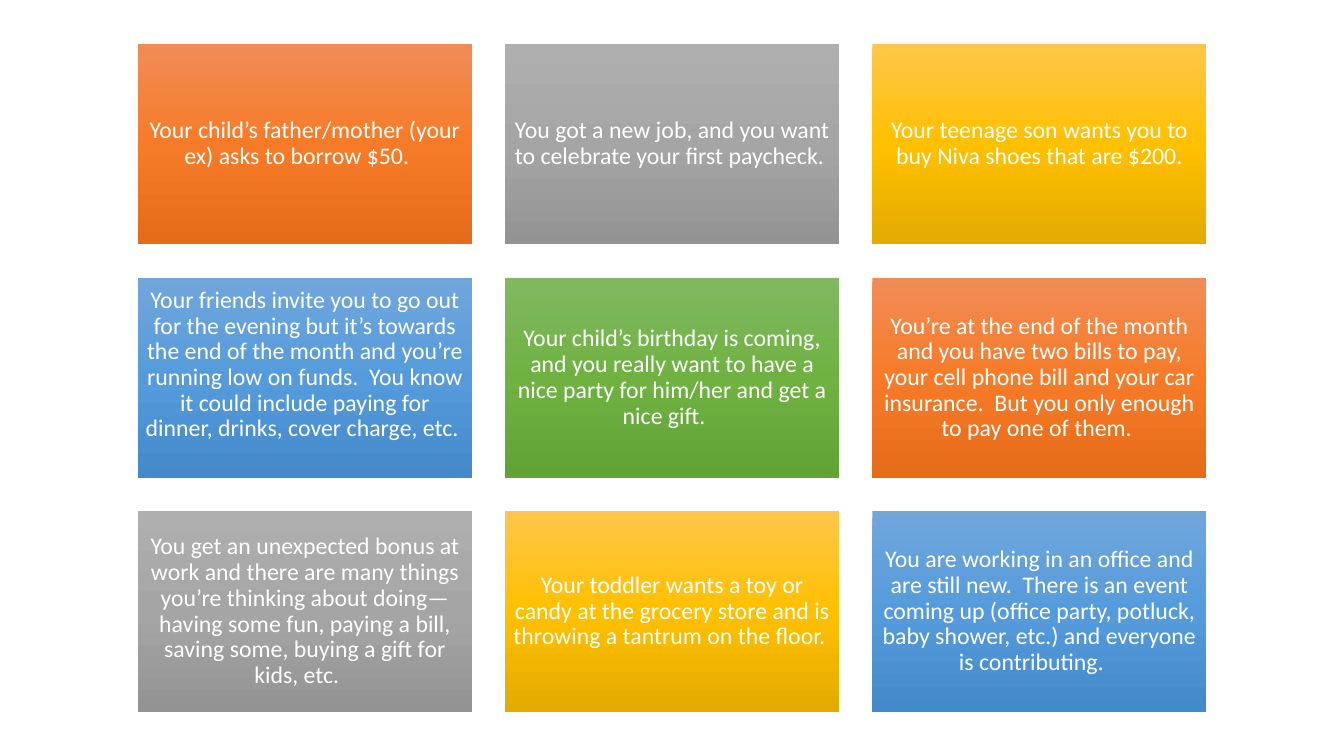
from copy import deepcopy

from pptx import Presentation
from pptx.dml.color import RGBColor
from pptx.enum.shapes import MSO_SHAPE as Shape
from pptx.enum.text import MSO_ANCHOR as Anchor, PP_ALIGN as Align
from pptx.oxml.ns import qn
from pptx.util import Pt

# Colours: top, middle and bottom of each gradient
WHITE = RGBColor(0xFF, 0xFF, 0xFF)
ORANGE = (RGBColor(0xF1, 0x8C, 0x57), RGBColor(0xF6, 0x7B, 0x28), RGBColor(0xE5, 0x6C, 0x19))
GRAY = (RGBColor(0xAF, 0xAF, 0xAF), RGBColor(0xA5, 0xA5, 0xA5), RGBColor(0x93, 0x93, 0x93))
GOLD = (RGBColor(0xFF, 0xC6, 0x4B), RGBColor(0xFF, 0xC0, 0x00), RGBColor(0xE3, 0xAB, 0x00))
BLUE = (RGBColor(0x71, 0xA6, 0xDB), RGBColor(0x55, 0x9B, 0xDB), RGBColor(0x44, 0x8A, 0xCA))
GREEN = (RGBColor(0x81, 0xB8, 0x61), RGBColor(0x6F, 0xB2, 0x42), RGBColor(0x62, 0xA3, 0x36))

# Card grid, in points
COLUMNS = 3
GRID_LEFT, GRID_TOP = 98.6, 31.45
CARD_WIDTH, CARD_HEIGHT = 238.5, 143.1
GAP = 23.8

# Situations, row by row
SITUATIONS = [
    ("Your child’s father/mother (your ex) asks to borrow $50.   ", ORANGE),
    ("You got a new job, and you want to celebrate your first paycheck.  ", GRAY),
    ("Your teenage son wants you to buy Niva shoes that are $200.", GOLD),
    ("Your friends invite you to go out for the evening but it’s towards the end of the month "
     "and you’re running low on funds.  You know it could include paying for dinner, drinks, "
     "cover charge, etc.   ", BLUE),
    ("Your child’s birthday is coming, and you really want to have a nice party for him/her "
     "and get a nice gift.   ", GREEN),
    ("You’re at the end of the month and you have two bills to pay, your cell phone bill and "
     "your car insurance.  But you only enough to pay one of them. ", ORANGE),
    ("You get an unexpected bonus at work and there are many things you’re thinking about "
     "doing—having some fun, paying a bill, saving some, buying a gift for kids, etc.   ", GRAY),
    ("Your toddler wants a toy or candy at the grocery store and is throwing a tantrum "
     "on the floor. ", GOLD),
    ("You are working in an office and are still new.  There is an event coming up (office "
     "party, potluck, baby shower, etc.) and everyone is contributing.   ", BLUE),
]


def write_text(frame, text, *, font, size, color, inset, line_spacing=0.9):
    """Fill a text frame with one centred paragraph."""
    frame.word_wrap = True
    frame.vertical_anchor = Anchor.MIDDLE
    frame.margin_left = frame.margin_right = Pt(inset)
    frame.margin_top = frame.margin_bottom = Pt(inset)
    paragraph = frame.paragraphs[0]
    paragraph.alignment = Align.CENTER
    paragraph.line_spacing = line_spacing
    run = paragraph.add_run()
    run.text = text
    run.font.name = font
    run.font.size = Pt(size)
    run.font.color.rgb = color


class CardSlide:
    """Holds the text style and the slide being built."""

    def __init__(self, slide, font="Calibri", size=17, color=WHITE, inset=5.1):
        self.slide = slide
        self.style = dict(font=font, size=size, color=color, inset=inset)

    def gradient(self, shape, colors):
        fill = shape.fill
        fill.gradient()
        fill.gradient_angle = 270  # counter-clockwise, so top to bottom
        # The default gradient has two stops; add the middle one
        stops = shape._element.spPr.find(qn("a:gradFill")).find(qn("a:gsLst"))
        stops.append(deepcopy(stops[0]))
        for stop, position, color in zip(fill.gradient_stops, (0, 0.5, 1), colors):
            stop.position = position
            stop.color.rgb = color

    def card(self, left, top, text, colors):
        card = self.slide.shapes.add_shape(
            Shape.RECTANGLE, Pt(left), Pt(top), Pt(CARD_WIDTH), Pt(CARD_HEIGHT))
        card.shadow.inherit = False
        card.line.fill.background()
        self.gradient(card, colors)
        write_text(card.text_frame, text, **self.style)


def main():
    deck = Presentation()
    deck.slide_width, deck.slide_height = Pt(960), Pt(540)
    cards = CardSlide(deck.slides.add_slide(deck.slide_layouts[6]))

    # Three rows of three cards
    for index, (situation, colors) in enumerate(SITUATIONS):
        row, column = divmod(index, COLUMNS)
        cards.card(GRID_LEFT + column * (CARD_WIDTH + GAP),
                   GRID_TOP + row * (CARD_HEIGHT + GAP), situation, colors)

    deck.save("out.pptx")


if __name__ == "__main__":
    main()
